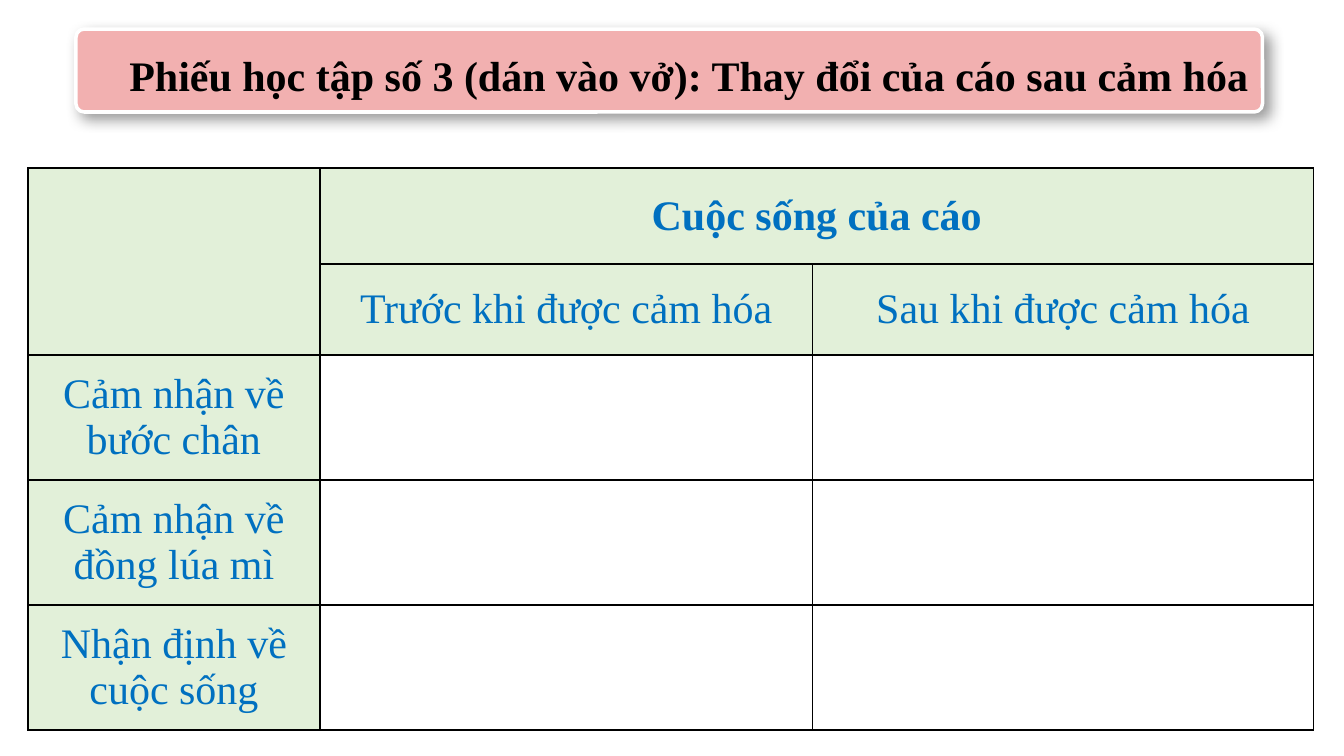
from lxml.etree import SubElement
from pptx import Presentation
from pptx.dml.color import RGBColor
from pptx.enum.shapes import MSO_SHAPE
from pptx.enum.text import MSO_ANCHOR, MSO_AUTO_SIZE, PP_ALIGN
from pptx.oxml import parse_xml
from pptx.oxml.ns import nsdecls, qn
from pptx.util import Inches, Pt

# Content
TITLE = "Phiếu học tập số 3 (dán vào vở): Thay đổi của cáo sau cảm hóa"
ROWS = [
    ["", "Cuộc sống của cáo", ""],
    ["", "Trước khi được cảm hóa", "Sau khi được cảm hóa"],
    ["Cảm nhận về bước chân", "", ""],
    ["Cảm nhận về đồng lúa mì", "", ""],
    ["Nhận định về cuộc sống", "", ""],
]
HEADER_ROWS = 2

# Layout in px
BANNER = (76, 29, 1187, 83)
TITLE_BOX = (117, 43, 1187, 63)
TABLE_LEFT, TABLE_TOP = 28, 168
COLUMN_WIDTHS = [292, 493, 501]
ROW_HEIGHTS = [96, 91, 125, 125, 125]

FONT, SIZE = "Times New Roman", Pt(24)
PINK, GREEN, BLUE = "F2B0B0", "E2F0D9", "0070C0"
WHITE, BLACK = "FFFFFF", "000000"


def px(value):
    return round(value * 914400 / 126)


def color(value):
    return RGBColor.from_string(value)


def paint(target, value):
    target.fill.solid()
    target.fill.fore_color.rgb = color(value)


def write(frame, text, text_color, alignment, bold):
    paragraph = frame.paragraphs[0]
    paragraph.text = text
    paragraph.alignment = alignment
    font = paragraph.font
    font.name, font.size, font.bold = FONT, SIZE, bold
    font.color.rgb = color(text_color)


def add_borders(cell):
    properties = cell._tc.get_or_add_tcPr()
    for side in ("a:lnL", "a:lnR", "a:lnT", "a:lnB"):
        line = SubElement(properties, qn(side), w=str(Pt(1)))
        fill = SubElement(line, qn("a:solidFill"))
        SubElement(fill, qn("a:srgbClr"), val=BLACK)


presentation = Presentation()
presentation.slide_width, presentation.slide_height = Inches(10.67), Inches(6)
slide = presentation.slides.add_slide(presentation.slide_layouts[6])

# Title banner with a soft shadow
banner = slide.shapes.add_shape(MSO_SHAPE.ROUNDED_RECTANGLE, *map(px, BANNER))
banner.adjustments[0] = 0.1
paint(banner, PINK)
banner.line.color.rgb = color(WHITE)
banner.line.width = Pt(2)
banner._element.spPr.append(parse_xml(
    f'<a:effectLst {nsdecls("a")}>'
    f'<a:outerShdw blurRad="{Pt(8)}" dist="{Pt(4)}" dir="{45 * 60000}" algn="tl" rotWithShape="0">'
    f'<a:srgbClr val="{BLACK}"><a:alpha val="40000"/></a:srgbClr>'
    '</a:outerShdw></a:effectLst>'))

# Title text
title = slide.shapes.add_textbox(*map(px, TITLE_BOX)).text_frame
title.word_wrap = True
title.auto_size = MSO_AUTO_SIZE.SHAPE_TO_FIT_TEXT
write(title, TITLE, BLACK, PP_ALIGN.JUSTIFY, True)

# Worksheet table
table = slide.shapes.add_table(
    len(ROWS), len(COLUMN_WIDTHS), px(TABLE_LEFT), px(TABLE_TOP),
    px(sum(COLUMN_WIDTHS)), px(sum(ROW_HEIGHTS))).table
for column, width in zip(table.columns, COLUMN_WIDTHS):
    column.width = px(width)
for row, height in zip(table.rows, ROW_HEIGHTS):
    row.height = px(height)

for row_index, texts in enumerate(ROWS):
    for column_index, text in enumerate(texts):
        cell = table.cell(row_index, column_index)
        is_heading = row_index < HEADER_ROWS or column_index == 0
        add_borders(cell)
        paint(cell, GREEN if is_heading else WHITE)
        cell.vertical_anchor = MSO_ANCHOR.MIDDLE
        if text:
            write(cell.text_frame, text, BLUE, PP_ALIGN.CENTER, row_index == 0)

table.cell(0, 0).merge(table.cell(1, 0))
table.cell(0, 1).merge(table.cell(0, 2))

presentation.save("out.pptx")
